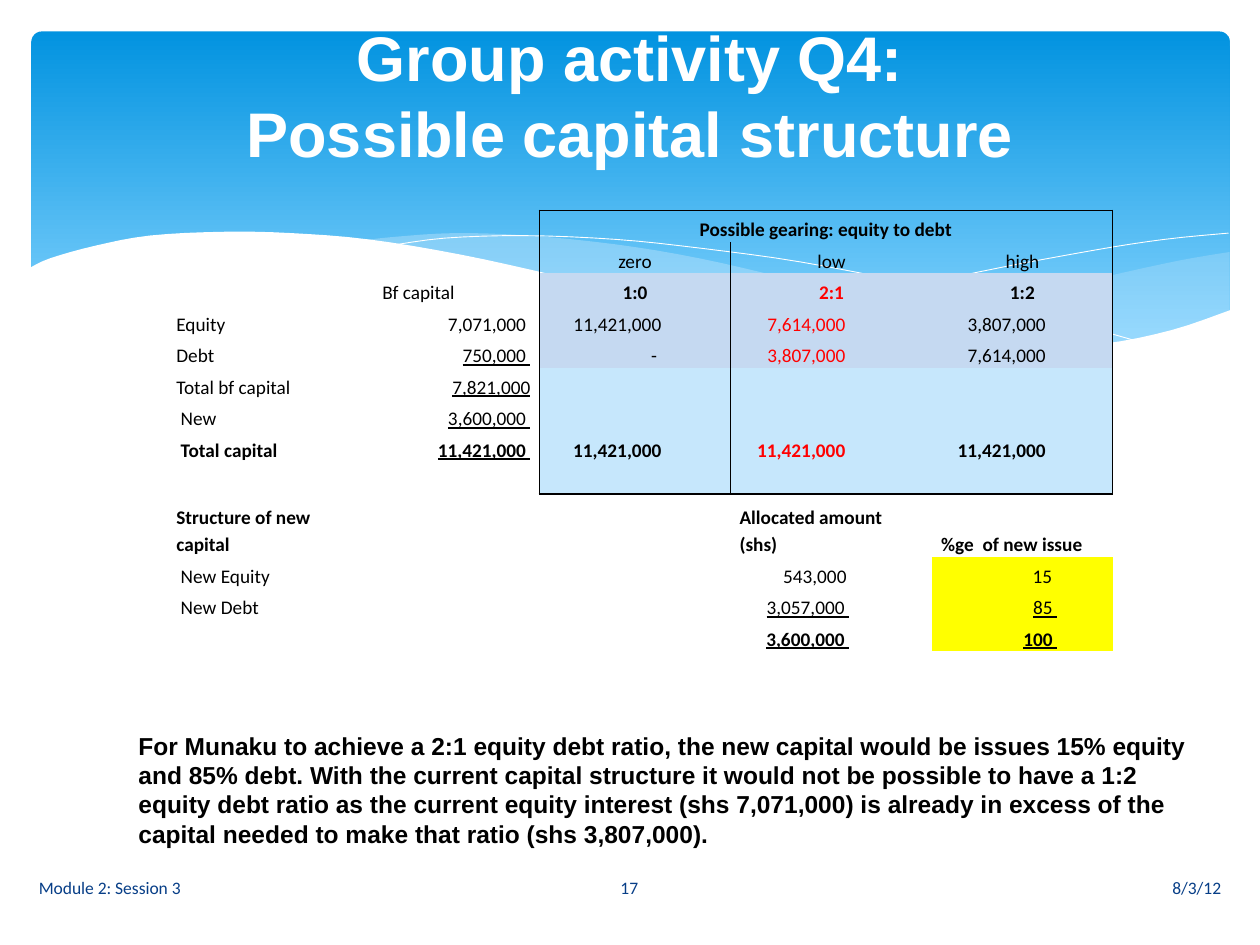
import copy
from dataclasses import dataclass

import pptx
import pptx.dml.color
import pptx.enum.shapes
import pptx.enum.text
import pptx.oxml
import pptx.oxml.ns
import pptx.util
from pptx.util import Inches

ALIGN = pptx.enum.text.PP_ALIGN
ANCHOR = pptx.enum.text.MSO_ANCHOR
qn = pptx.oxml.ns.qn
BLACK, RED, WHITE, NAVY = "000000", "FF0000", "FFFFFF", "073E87"
SKY, PALE, YELLOW = "C6E7FC", "C5D9F1", "FFFF00"
INSET = 0.07


@dataclass
class Wave:
    """Smooth edges joined in turn; a filled wave is closed, a line is not."""
    edges: list
    fill: str = ""
    alpha: int = 100


@dataclass
class Label:
    text: str
    left: float
    top: float
    width: float
    height: float
    size: int = 10
    font: str = "Calibri"
    color: str = NAVY
    bold: bool = False
    align: ALIGN = ALIGN.LEFT
    anchor: ANCHOR = ANCHOR.MIDDLE


@dataclass
class Entry:
    text: str
    align: ALIGN = ALIGN.LEFT
    bold: bool = False
    color: str = BLACK
    underline: bool = False
    gap: float = INSET
    tab: float = 0


WAVES = [
    Wave([[(9.76, 2), (9.35, 2.07), (8.76, 2.2), (8.05, 2.37), (7.29, 2.53), (6.61, 2.65)],
          [(6.61, 2.65), (7.19, 2.72), (7.69, 2.77), (8.14, 2.78), (8.63, 2.75),
           (9.13, 2.67), (9.49, 2.57), (9.76, 2.47)]], SKY, 29),
    Wave([[(8.93, 2.73), (8.07, 2.6), (7.06, 2.4), (6.29, 2.22), (5.55, 2.05), (4.89, 1.94),
           (4.2, 1.87), (3.61, 1.85), (3.13, 1.88), (2.86, 1.91)],
          [(2.86, 1.91), (3.62, 2.03), (4.49, 2.22), (5.3, 2.4), (6.01, 2.55), (6.8, 2.68),
           (7.48, 2.76), (8.07, 2.78), (8.57, 2.77), (8.93, 2.73)]], SKY, 40),
    Wave([[(3.09, 1.95), (3.53, 1.89), (4.16, 1.87), (4.89, 1.9), (5.56, 1.97), (6.36, 2.08),
           (7.27, 2.26), (8.31, 2.51), (9.07, 2.72)]]),
    Wave([[(6.13, 2.57), (6.95, 2.35), (7.76, 2.16), (8.66, 1.99), (9.24, 1.9), (9.75, 1.85)]]),
    Wave([[(9.77, 2.46), (9.3, 2.62), (8.75, 2.73), (8.09, 2.77), (7.26, 2.72), (6.48, 2.62),
           (5.55, 2.45), (4.47, 2.2), (3.65, 2.02), (2.92, 1.9), (2.3, 1.85), (1.77, 1.84),
           (1.19, 1.87), (0.76, 1.95), (0.4, 2.05), (0.23, 2.13)],
          [(0.23, 3.29), (9.77, 3.29)]], WHITE),
]

TITLE = Label("Group activity Q4:\vPossible capital structure", 0.5, 0, 9, 1.5,
              36, "Arial", WHITE, True, ALIGN.CENTER)
LABELS = [
    Label("8/3/12", 5.65, 6.84, 4.14, 0.4, align=ALIGN.RIGHT),
    Label("Module 2: Session 3", 0.21, 6.84, 4.14, 0.4),
    Label("17", 4.36, 6.84, 1.27, 0.4, align=ALIGN.CENTER),
    Label("For Munaku to achieve a 2:1 equity debt ratio, the new capital would be issues 15% "
          "equity and 85% debt. With the current capital structure it would not be possible to "
          "have a 1:2 equity debt ratio as the current equity interest (shs 7,071,000) is already "
          "in excess of the capital needed to make that ratio (shs 3,807,000).",
          1, 5.75, 8.58, 1.04, 14, "Arial", BLACK, True, anchor=ANCHOR.TOP),
]

COLUMNS = [1.6, 1.35, 1.52, 1.6, 1.43]
ROWS = [0.25] * 9 + [0.5] + [0.25] * 3
BOX_COLUMNS, BOX_ROWS = range(2, 5), range(9)
FIGURE_GAPS = [0.55, 0.69, 0.53]


def color(value: str) -> pptx.dml.color.RGBColor:
    return pptx.dml.color.RGBColor.from_string(value)


def apply(target, values: dict) -> None:
    for name, value in values.items():
        setattr(target, name, value)


def format_font(font, size, name, shade, bold, underline=None) -> None:
    apply(font, {"size": pptx.util.Pt(size), "name": name, "bold": bold, "underline": underline})
    font.color.rgb = color(shade)


def smooth(points: list, steps: int = 4) -> list:
    """Catmull-Rom samples of a curve through the points."""
    if len(points) < 3:
        return points
    ends = [points[0], *points, points[-1]]
    result = [points[0]]
    for a, b, c, d in zip(ends, ends[1:], ends[2:], ends[3:]):
        for t in (step / steps for step in range(1, steps + 1)):
            result.append(tuple(
                0.5 * (2 * q + (r - p) * t + (2 * p - 5 * q + 4 * r - s) * t ** 2
                       + (3 * q - p - 3 * r + s) * t ** 3)
                for p, q, r, s in zip(a, b, c, d)))
    return result


def draw_wave(page, wave: Wave) -> None:
    points = [(Inches(x), Inches(y)) for edge in wave.edges for x, y in smooth(edge)]
    builder = page.shapes.build_freeform(*points[0])
    builder.add_line_segments(points[1:], close=bool(wave.fill))
    shape = builder.convert_to_shape()
    shape.shadow.inherit = False
    if not wave.fill:
        shape.fill.background()
        shape.line.color.rgb = color(WHITE)
        shape.line.width = pptx.util.Pt(0.5)
        return
    shape.line.fill.background()
    shape.fill.solid()
    shape.fill.fore_color.rgb = color(wave.fill)
    if wave.alpha < 100:
        shade = shape.element.spPr.find(".//" + qn("a:srgbClr"))
        shade.makeelement(qn("a:alpha"), {})
        pptx.oxml.ns  # namespace helpers serve the sub-element below
        alpha = shade.makeelement(qn("a:alpha"), {"val": str(wave.alpha * 1000)})
        shade.append(alpha)


def draw_banner(page) -> None:
    banner = page.shapes.add_shape(pptx.enum.shapes.MSO_SHAPE.ROUNDED_RECTANGLE,
                                   Inches(0.25), Inches(0.25), Inches(9.51), Inches(2.7))
    banner.adjustments[0] = 0.03
    banner.shadow.inherit = False
    banner.line.fill.background()
    banner.fill.gradient()
    banner.fill.gradient_angle = 270
    for stop, position, shade in zip(banner.fill.gradient_stops, (0, 0.9), ("0293E0", "83D3FE")):
        stop.position = position
        stop.color.rgb = color(shade)


def write_label(box, label: Label) -> None:
    apply(box, {side: Inches(getattr(label, side)) for side in ("left", "top", "width", "height")})
    frame = box.text_frame
    apply(frame, {"word_wrap": True, "vertical_anchor": label.anchor,
                  "auto_size": pptx.enum.text.MSO_AUTO_SIZE.NONE})
    para = frame.paragraphs[0]
    para.text = label.text
    para.alignment = label.align
    for span in para.runs:
        format_font(span.font, label.size, label.font, label.color, label.bold)
    for line_break in para._p.findall(qn("a:br")):
        line_break.append(copy.deepcopy(para.runs[0].font._element))


def figures(texts: list, bold: bool = False) -> list:
    return [Entry(text, ALIGN.RIGHT, bold, shade, gap=gap)
            for text, shade, gap in zip(texts, (BLACK, RED, BLACK), FIGURE_GAPS)]


def table_entries() -> list:
    """Rows of entries; None leaves a cell empty."""
    def heads(texts, shades=(BLACK,) * 3, bold=False):
        return [Entry(text, ALIGN.CENTER, bold, shade) for text, shade in zip(texts, shades)]

    def opening(name, amount, underline=True, bold=False):
        return [Entry(name, bold=bold), Entry(amount, ALIGN.RIGHT, bold, underline=underline)]

    def sums(amount, share, bold=False):
        return [Entry("\t" + text + " ", bold=bold, underline=True, tab=tab)
                for text, tab in ((amount, 0.87), (share, 0.92))]

    none = [None]
    total = "11,421,000"
    return [
        none * 2 + [Entry("Possible gearing: equity to debt", ALIGN.CENTER, True)] + none * 2,
        none * 2 + heads(["zero", "low", "high"]),
        none + [Entry(" Bf capital")] + heads(["1:0", "2:1", "1:2"], (BLACK, RED, BLACK), True),
        opening("Equity", "7,071,000 ", False) + figures([total, "7,614,000", "3,807,000"]),
        opening("Debt", "750,000 ") + figures(["- ", "3,807,000", "7,614,000"]),
        opening("Total bf capital", "7,821,000") + none * 3,
        opening(" New", "3,600,000 ") + none * 3,
        opening(" Total capital", total + " ", bold=True) + figures([total] * 3, True),
        none * 5,
        [Entry("Structure of new capital", bold=True)] + none * 2
        + [Entry("Allocated amount (shs)", bold=True), Entry("%ge  of new issue", bold=True)],
        [Entry(" New Equity")] + none * 2
        + [Entry("543,000", ALIGN.RIGHT, gap=0.68), Entry("15", ALIGN.RIGHT, gap=0.48)],
        [Entry(" New Debt")] + none * 2 + sums("3,057,000", "85"),
        none * 3 + sums("3,600,000", "100", True),
    ]


def cell_fill(row: int, column: int) -> str:
    if column in BOX_COLUMNS and 2 <= row < len(BOX_ROWS):
        return PALE if row < 5 else SKY
    return YELLOW if row > 9 and column == 4 else ""


def draw_borders(cell, row: int, column: int) -> None:
    """Outline the gearing box, edge by edge."""
    if row not in BOX_ROWS or column not in BOX_COLUMNS:
        return
    edges = {"L": column == 2, "R": column == 4 or row == 0, "T": row == 0, "B": row == 8}
    for edge in (name for name, wanted in edges.items() if wanted):
        cell._tc.get_or_add_tcPr().append(pptx.oxml.parse_xml(
            f'<a:ln{edge} xmlns:a="http://schemas.openxmlformats.org/drawingml/2006/main" '
            f'w="12700"><a:solidFill><a:srgbClr val="{BLACK}"/></a:solidFill></a:ln{edge}>'))


def write_entry(cell, entry: Entry) -> None:
    para = cell.text_frame.paragraphs[0]
    apply(para, {"alignment": entry.align, "line_spacing": 1.15})
    span = para.add_run()
    span.text = entry.text
    format_font(span.font, 11, "Calibri", entry.color, entry.bold, entry.underline)
    cell.margin_right = Inches(entry.gap)
    if entry.tab:
        properties = para._p.get_or_add_pPr()
        stops = properties.makeelement(qn("a:tabLst"), {})
        stops.append(stops.makeelement(qn("a:tab"), {"pos": str(Inches(entry.tab)), "algn": "r"}))
        properties.append(stops)


def draw_table(page) -> None:
    table = page.shapes.add_table(len(ROWS), len(COLUMNS), Inches(1.33), Inches(1.67),
                                  Inches(sum(COLUMNS)), Inches(sum(ROWS))).table
    apply(table, {"first_row": False, "horz_banding": False})
    style = table._tbl.tblPr.find(qn("a:tableStyleId"))
    style.text = "{2D5ABB26-0587-4C30-8999-92F81FD0307C}"
    for column, width in zip(table.columns, COLUMNS):
        column.width = Inches(width)
    for row, height in zip(table.rows, ROWS):
        row.height = Inches(height)
    table.cell(0, 2).merge(table.cell(0, 4))
    for row, entries in enumerate(table_entries()):
        for column, entry in enumerate(entries):
            cell = table.cell(row, column)
            apply(cell, {"margin_left": Inches(INSET), "margin_right": Inches(INSET),
                         "margin_top": 0, "margin_bottom": 0, "vertical_anchor": ANCHOR.BOTTOM})
            draw_borders(cell, row, column)
            shade = cell_fill(row, column)
            if shade:
                cell.fill.solid()
                cell.fill.fore_color.rgb = color(shade)
            else:
                cell.fill.background()
            if entry:
                write_entry(cell, entry)
            else:
                para = cell.text_frame.paragraphs[0]._p
                para.append(para.makeelement(qn("a:endParaRPr"), {"sz": "1100"}))


def main() -> None:
    deck = pptx.Presentation()
    deck.slide_width, deck.slide_height = Inches(10), Inches(7.5)
    page = deck.slides.add_slide(deck.slide_layouts[5])
    draw_banner(page)
    for wave in WAVES:
        draw_wave(page, wave)
    title = page.shapes.title
    page.shapes.element.append(title.element)
    write_label(title, TITLE)
    *footers, conclusion = LABELS
    for label in footers:
        write_label(page.shapes.add_textbox(0, 0, 0, 0), label)
    draw_table(page)
    write_label(page.shapes.add_textbox(0, 0, 0, 0), conclusion)
    deck.save("out.pptx")


if __name__ == "__main__":
    main()
